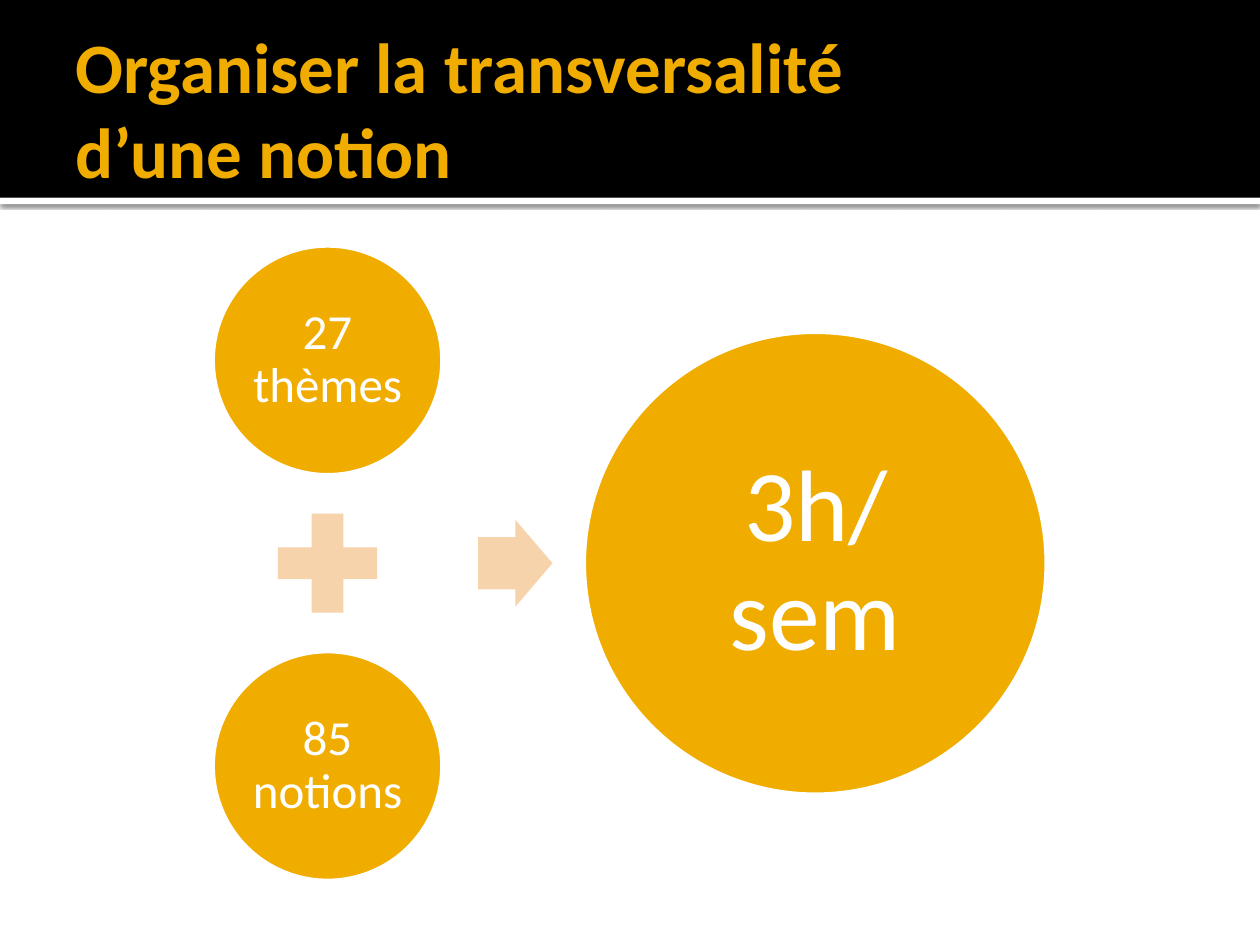
from dataclasses import dataclass

from lxml import etree
from pptx import Presentation
from pptx.dml.color import RGBColor
from pptx.enum.shapes import MSO_SHAPE
from pptx.enum.text import MSO_ANCHOR, PP_ALIGN
from pptx.oxml.ns import qn
from pptx.util import Inches, Pt


@dataclass(frozen=True)
class Theme:
    font: str = "Calibri"
    black: RGBColor = RGBColor(0x00, 0x00, 0x00)
    white: RGBColor = RGBColor(0xFF, 0xFF, 0xFF)
    gold: RGBColor = RGBColor(0xF0, 0xAD, 0x00)
    peach: RGBColor = RGBColor(0xF6, 0xD3, 0xAB)
    title_size: float = 40.5
    term_size: float = 28
    result_size: float = 58
    outline: float = 3.78


class SlideBuilder:
    def __init__(self, slide, theme):
        self.slide = slide
        self.theme = theme

    def shape(self, kind, left, top, width, height, color):
        shape = self.slide.shapes.add_shape(
            kind, Inches(left), Inches(top), Inches(width), Inches(height))
        shape.shadow.inherit = False
        shape.fill.solid()
        shape.fill.fore_color.rgb = color
        shape.line.fill.background()
        return shape

    def drop_shadow(self, shape):
        """Add a soft black shadow just below the shape."""
        effects = shape._element.spPr.find(qn("a:effectLst"))
        shadow = etree.SubElement(
            effects, qn("a:outerShdw"), blurRad=str(Pt(2.5)), dist=str(Pt(0.8)),
            dir="5400000", algn="t", rotWithShape="0")
        color = etree.SubElement(shadow, qn("a:srgbClr"), val=str(self.theme.black))
        etree.SubElement(color, qn("a:alpha"), val="60000")

    def set_text(self, shape, text, size, color, insets):
        """Fill the shape with wrapped, vertically centred text."""
        frame = shape.text_frame
        frame.word_wrap = True
        frame.vertical_anchor = MSO_ANCHOR.MIDDLE
        (frame.margin_left, frame.margin_top,
         frame.margin_right, frame.margin_bottom) = map(Inches, insets)
        paragraph = frame.paragraphs[0]
        paragraph.text = text
        paragraph.font.name = self.theme.font
        paragraph.font.size = Pt(size)
        paragraph.font.color.rgb = color
        return paragraph

    def title(self, text):
        box = self.slide.shapes.add_textbox(
            Inches(0.5), Inches(0.17), Inches(9), Inches(1.37))
        paragraph = self.set_text(box, text, self.theme.title_size, self.theme.gold,
                                  (0.1, 0.05, 0.05, 0.05))
        paragraph.font.bold = True

    def circle(self, center_x, center_y, diameter, text, size, inset):
        circle = self.shape(MSO_SHAPE.OVAL, center_x - diameter / 2,
                            center_y - diameter / 2, diameter, diameter,
                            self.theme.gold)
        circle.line.color.rgb = self.theme.white
        circle.line.width = Pt(self.theme.outline)
        paragraph = self.set_text(circle, text, size, self.theme.white, (inset,) * 4)
        paragraph.alignment = PP_ALIGN.CENTER
        paragraph.line_spacing = 0.9

    def symbol(self, kind, center_x, center_y, width, height):
        return self.shape(kind, center_x - width / 2, center_y - height / 2,
                          width, height, self.theme.peach)


def main():
    presentation = Presentation()
    presentation.slide_width = Inches(10)
    presentation.slide_height = Inches(7.5)
    slide = presentation.slides.add_slide(presentation.slide_layouts[6])
    theme = Theme()
    builder = SlideBuilder(slide, theme)

    header_height = 1.57
    rule = builder.shape(MSO_SHAPE.RECTANGLE, 0, header_height, 10, 0.05, theme.white)
    builder.drop_shadow(rule)
    builder.shape(MSO_SHAPE.RECTANGLE, 0, 0, 10, header_height, theme.black)
    builder.title("Organiser la transversalité\vd’une notion")

    terms_x, middle_y, term_offset = 2.6, 4.47, 1.61
    for text, direction in (("27 thèmes", -1), ("85 notions", 1)):
        builder.circle(terms_x, middle_y + direction * term_offset, 1.84,
                       text, theme.term_size, 0.04)
    builder.symbol(MSO_SHAPE.MATH_PLUS, terms_x, middle_y, 1.07, 1.07)
    arrow = builder.symbol(MSO_SHAPE.RIGHT_ARROW, 4.09, middle_y, 0.59, 0.69)
    arrow.adjustments[0] = 0.6
    arrow.adjustments[1] = 0.5
    builder.circle(6.47, middle_y, 3.69, "3h/sem", theme.result_size, 0.08)

    presentation.save("out.pptx")


if __name__ == "__main__":
    main()
